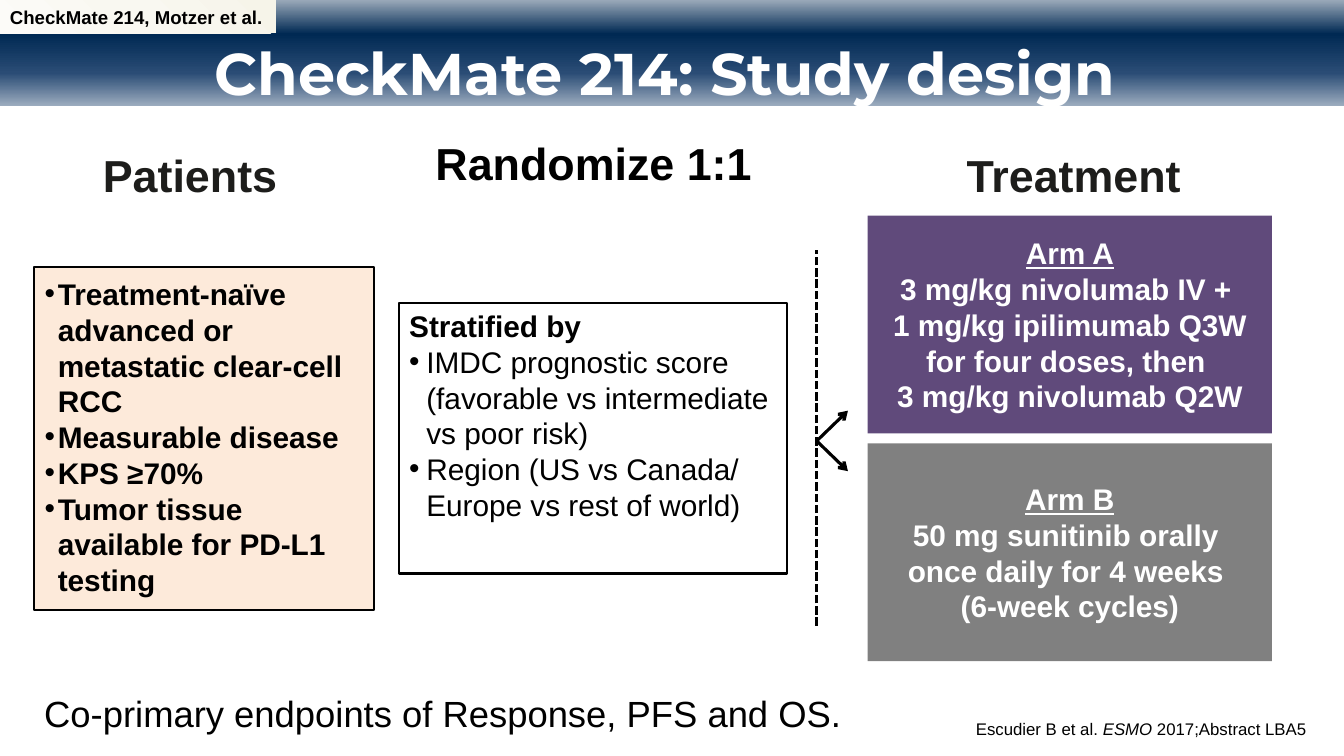
from dataclasses import dataclass

from lxml.etree import SubElement
from pptx import Presentation
from pptx.dml.color import RGBColor
from pptx.enum.dml import MSO_LINE
from pptx.enum.shapes import MSO_CONNECTOR, MSO_SHAPE
from pptx.enum.text import MSO_ANCHOR, PP_ALIGN
from pptx.oxml import parse_xml
from pptx.oxml.ns import nsdecls, qn
from pptx.util import Inches, Pt


@dataclass(frozen=True)
class Theme:
    body_font: str = "Arial"
    title_font: str = "Montserrat"
    black: str = "000000"
    white: str = "FFFFFF"
    heading: str = "1D1D1B"
    patients: str = "FDEADA"
    arm_a: str = "604A7B"
    arm_b: str = "808080"
    # gradient stops: position %, colour
    banner: tuple = ((0, "9AA9B9"), (32, "002953"), (69, "2A4C75"), (100, "9BABBE"))
    label: tuple = ((0, "F6F4E9"), (50, "F9F8F1"), (100, "FCFBF8"))
    title_size: float = 42
    heading_size: float = 32
    endpoint_size: float = 26
    body_size: float = 21.3
    label_size: float = 13.3
    citation_size: float = 12


THEME = Theme()
WIDTH, HEIGHT = Inches(13.33), Inches(7.5)
MARGIN = 2.55
HEADING_TOP, HEADING_HEIGHT = 19.53, 7.2
ARM_LEFT, ARM_TOP, ARM_WIDTH, ARM_HEIGHT, ARM_GAP = 64.56, 28.53, 30.08, 28.8, 1.33
SPLIT_X, SPLIT_Y = 60.77, 58.33


def across(share):
    return round(WIDTH * share / 100)


def down(share):
    return round(HEIGHT * share / 100)


def place(left, top, width, height):
    """Turn percentages of the slide into a position and size."""
    return across(left), down(top), across(width), down(height)


def rgb(colour):
    return RGBColor.from_string(colour)


def panel(slide, area, fill=None, outline=None):
    rect = slide.shapes.add_shape(MSO_SHAPE.RECTANGLE, *place(*area))
    rect.shadow.inherit = False
    if fill:
        rect.fill.solid()
        rect.fill.fore_color.rgb = rgb(fill)
    if outline:
        rect.line.color.rgb = rgb(outline)
        rect.line.width = Pt(1.5)
    else:
        rect.line.fill.background()
    return rect


def gradient_panel(slide, area, stops, angle):
    """Add a rectangle with a linear gradient; angle is clockwise degrees."""
    rect = panel(slide, area)
    stop_xml = "".join(
        f'<a:gs pos="{position * 1000}"><a:srgbClr val="{colour}"/></a:gs>'
        for position, colour in stops)
    gradient = parse_xml(
        f'<a:gradFill {nsdecls("a")} rotWithShape="1"><a:gsLst>{stop_xml}</a:gsLst>'
        f'<a:lin ang="{angle * 60000}" scaled="0"/></a:gradFill>')
    rect._element.spPr.find(qn("a:prstGeom")).addnext(gradient)
    return rect


def text_box(slide, area, inset=True, wrap=True, anchor=MSO_ANCHOR.TOP):
    box = slide.shapes.add_textbox(*place(*area))
    frame = box.text_frame
    frame.word_wrap = wrap
    frame.vertical_anchor = anchor
    if not inset:
        frame.margin_left = frame.margin_right = frame.margin_top = frame.margin_bottom = 0
    return box


def bullet(paragraph, left, hanging):
    properties = paragraph._p.get_or_add_pPr()
    properties.set("marL", str(Inches(left)))
    properties.set("indent", str(-Inches(hanging)))
    SubElement(properties, qn("a:buFont"), typeface=THEME.body_font)
    SubElement(properties, qn("a:buChar"), char="•")


def write(shape, paragraphs, size, colour=THEME.black, bold=False,
          align=PP_ALIGN.LEFT, font=THEME.body_font, indent=None):
    """Fill a shape; each paragraph lists (text, style) runs, "\\n" breaking lines.

    A style holds any of b, i, u; paragraphs with "*" in a style are bulleted.
    """
    frame = shape.text_frame
    for index, runs in enumerate(paragraphs):
        paragraph = frame.add_paragraph() if index else frame.paragraphs[0]
        paragraph.alignment = align
        if "*" in runs[0][1]:
            bullet(paragraph, *indent)
        for text, style in runs:
            for number, line in enumerate(text.split("\n")):
                if number:
                    paragraph.add_line_break()
                run = paragraph.add_run()
                run.text = line
                run.font.name = font
                run.font.size = Pt(size)
                run.font.color.rgb = rgb(colour)
                run.font.bold = bold or "b" in style
                run.font.italic = "i" in style
                run.font.underline = "u" in style


def heading(slide, text, left, width):
    box = text_box(slide, (left, HEADING_TOP, width, HEADING_HEIGHT), inset=False, wrap=False)
    write(box, [[(text, "")]], THEME.heading_size, THEME.heading, True, PP_ALIGN.CENTER)


def treatment_arm(slide, row, fill, paragraphs):
    top = ARM_TOP + row * (ARM_HEIGHT + ARM_GAP)
    arm = panel(slide, (ARM_LEFT, top, ARM_WIDTH, ARM_HEIGHT), fill)
    arm.text_frame.vertical_anchor = MSO_ANCHOR.MIDDLE
    write(arm, paragraphs, THEME.body_size, THEME.white, True, PP_ALIGN.CENTER)


def black_line(slide, start, end, weight):
    line = slide.shapes.add_connector(
        MSO_CONNECTOR.STRAIGHT, across(start[0]), down(start[1]), across(end[0]), down(end[1]))
    line.line.color.rgb = rgb(THEME.black)
    line.line.width = Pt(weight)
    SubElement(line._element.spPr, qn("a:effectLst"))
    return line


def randomization_split(slide):
    divider = black_line(slide, (SPLIT_X, 82.8), (SPLIT_X, 33.07), 2)
    divider.line.dash_style = MSO_LINE.SQUARE_DOT
    for arm_y in (SPLIT_Y - 4, SPLIT_Y + 4):
        arrow = black_line(slide, (SPLIT_X, SPLIT_Y), (SPLIT_X + 2.32, arm_y), 2.25)
        SubElement(arrow.line._get_or_add_ln(), qn("a:tailEnd"), type="arrow")


def main():
    deck = Presentation()
    deck.slide_width, deck.slide_height = WIDTH, HEIGHT
    slide = deck.slides.add_slide(deck.slide_layouts[6])

    gradient_panel(slide, (0, 0, 100, 14), THEME.banner, 90)
    title = text_box(slide, (MARGIN, 2.27, 93.8, 14.53), anchor=MSO_ANCHOR.MIDDLE)
    write(title, [[("CheckMate 214: Study design", "")]], THEME.title_size, THEME.white,
          True, PP_ALIGN.CENTER, THEME.title_font)
    endpoints = text_box(slide, (MARGIN, 90.67, 75.2, 7.2), anchor=MSO_ANCHOR.BOTTOM)
    write(endpoints, [[("Co-primary endpoints of Response, PFS and OS.", "")]],
          THEME.endpoint_size)

    panel(slide, (MARGIN, 35.33, 25.25, 45.33), THEME.patients, THEME.black)
    criteria = text_box(slide, (2.43, 36.47, 24.3, 43.07), inset=False)
    write(criteria, [[("Treatment-naïve advanced or metastatic clear-cell RCC", "*")],
                     [("Measurable disease", "*")],
                     [("KPS ≥70%", "*")],
                     [("Tumor tissue available for PD-L1 testing", "*")]],
          THEME.body_size, bold=True, indent=(0.25, 0.13))

    heading(slide, "Treatment", 71.87, 16.05)
    heading(slide, "Patients ", 7.6, 14.03)
    randomize = text_box(slide, (31.66, 17.33, 26, 9.87))
    write(randomize, [[("Randomize 1:1", "")]], THEME.heading_size, bold=True)

    treatment_arm(slide, 0, THEME.arm_a, [
        [("Arm A", "u")],
        [("3 mg/kg nivolumab IV + \n1 mg/kg ipilimumab Q3W for four doses, then \n"
          "3 mg/kg nivolumab Q2W", "")]])
    treatment_arm(slide, 1, THEME.arm_b, [
        [("Arm B", "u")],
        [("50 mg sunitinib orally \nonce daily for 4 weeks ", "")],
        [("(6-week cycles)", "")]])
    randomization_split(slide)

    strata = panel(slide, (29.71, 40.07, 28.84, 35.8), THEME.white, THEME.black)
    strata.text_frame.vertical_anchor = MSO_ANCHOR.TOP
    write(strata, [[("Stratified by", "b")],
                   [("IMDC prognostic score (favorable vs intermediate vs poor risk)", "*")],
                   [("Region (US vs Canada/ Europe vs rest of world)", "*")]],
          THEME.body_size, indent=(0.17, 0.17))

    study = gradient_panel(slide, (0, 0, 20.55, 4.4), THEME.label, 135)
    study.text_frame.word_wrap = False
    write(study, [[("CheckMate 214, Motzer et al.", "b")]], THEME.label_size)
    citation = text_box(slide, (71.87, 94.4, 27.23, 4))
    write(citation, [[("Escudier B et al. ", ""), ("ESMO", "i"), (" 2017;Abstract LBA5", "")]],
          THEME.citation_size)

    deck.save("out.pptx")


if __name__ == "__main__":
    main()
